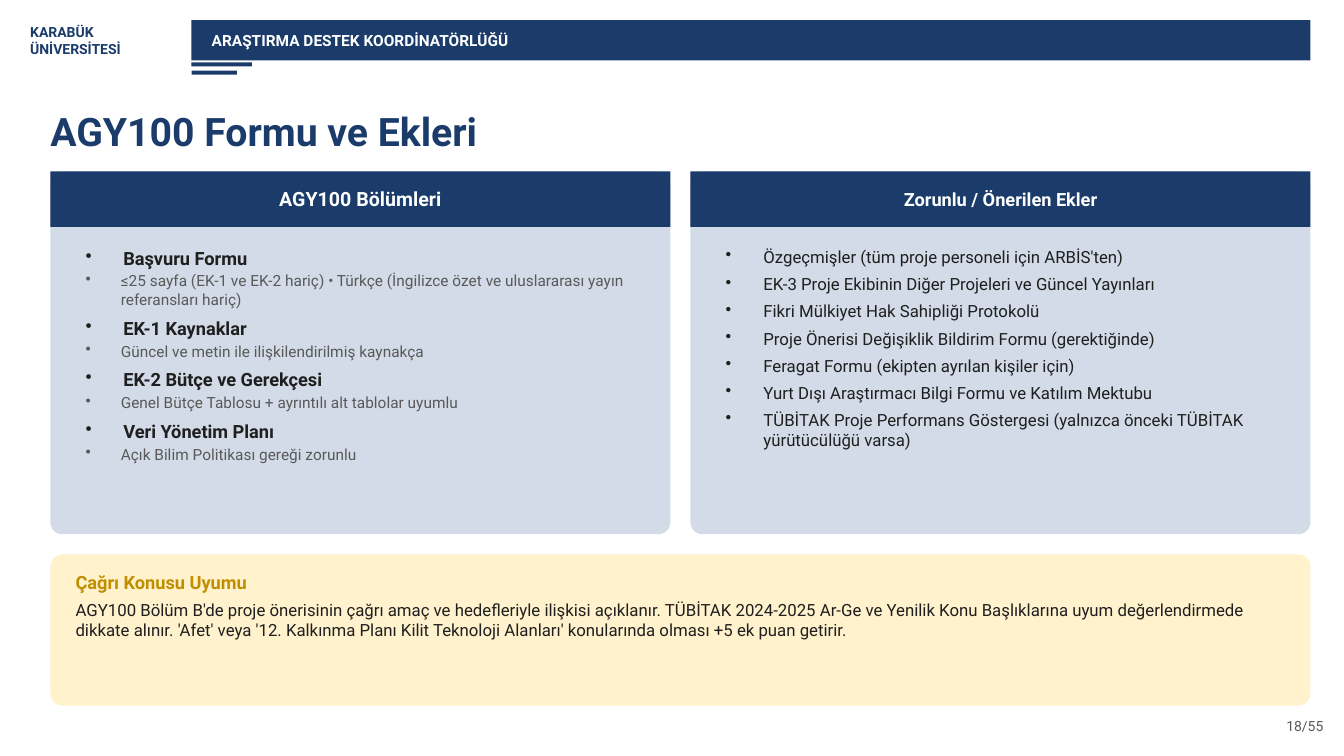
import pptx
import pptx.util
import pptx.dml.color
import pptx.enum.shapes
import pptx.enum.text
from lxml import etree

Pt = pptx.util.Pt
Shapes = pptx.enum.shapes.MSO_SHAPE
Align = pptx.enum.text.PP_ALIGN
Anchor = pptx.enum.text.MSO_ANCHOR

THEME = {
    "font": "Roboto",
    "navy": "1B3C6B", "white": "FFFFFF", "panel": "D2DBE7", "cream": "FFF2CC",
    "gold": "BF8F00", "ink": "1F1F1F", "gray": "595959",
    "title": 28, "panel_title": 14, "heading": 13, "body": 12, "banner": 11, "detail": 11, "small": 10,
}

UNIVERSITY = ["KARABÜK", "ÜNİVERSİTESİ"]
BANNER = "ARAŞTIRMA DESTEK KOORDİNATÖRLÜĞÜ"
TITLE = "AGY100 Formu ve Ekleri"
PAGE = "18/55"
SECTIONS = [
    ("Başvuru Formu",
     "≤25 sayfa (EK-1 ve EK-2 hariç) • Türkçe (İngilizce özet ve uluslararası yayın referansları hariç)"),
    ("EK-1 Kaynaklar", "Güncel ve metin ile ilişkilendirilmiş kaynakça"),
    ("EK-2 Bütçe ve Gerekçesi", "Genel Bütçe Tablosu + ayrıntılı alt tablolar uyumlu"),
    ("Veri Yönetim Planı", "Açık Bilim Politikası gereği zorunlu"),
]
ATTACHMENTS = [
    "Özgeçmişler (tüm proje personeli için ARBİS'ten)",
    "EK-3 Proje Ekibinin Diğer Projeleri ve Güncel Yayınları",
    "Fikri Mülkiyet Hak Sahipliği Protokolü",
    "Proje Önerisi Değişiklik Bildirim Formu (gerektiğinde)",
    "Feragat Formu (ekipten ayrılan kişiler için)",
    "Yurt Dışı Araştırmacı Bilgi Formu ve Katılım Mektubu",
    "TÜBİTAK Proje Performans Göstergesi (yalnızca önceki TÜBİTAK yürütücülüğü varsa)",
]
CALL_TITLE = "Çağrı Konusu Uyumu"
CALL_TEXT = (
    "AGY100 Bölüm B'de proje önerisinin çağrı amaç ve hedefleriyle ilişkisi açıklanır. "
    "TÜBİTAK 2024-2025 Ar-Ge ve Yenilik Konu Başlıklarına uyum değerlendirmede dikkate alınır. "
    "'Afet' veya '12. Kalkınma Planı Kilit Teknoloji Alanları' konularında olması +5 ek puan getirir."
)

MARGIN = 36
PANEL_TOP, PANEL_WIDTH, PANEL_HEIGHT, PANEL_GAP = 122.4, 442.8, 259.2, 14.4
PANEL_HEADER = 39.6
PADDING = 18
CONTENT_WIDTH = 2 * PANEL_WIDTH + PANEL_GAP
BANNER_LEFT = 136.8
CALL_TOP = PANEL_TOP + PANEL_HEIGHT + PANEL_GAP


def color(name):
    return pptx.dml.color.RGBColor.from_string(THEME[name])


def style(paragraph, size, tone, bold=False, align=Align.LEFT):
    paragraph.alignment = align
    for run in paragraph.runs:
        run.font.name = THEME["font"]
        run.font.size = Pt(THEME[size])
        run.font.bold = bold
        run.font.color.rgb = color(tone)


def prepare_frame(shape, anchor=Anchor.MIDDLE, inset=0):
    frame = shape.text_frame
    frame.word_wrap = True
    frame.auto_size = pptx.enum.text.MSO_AUTO_SIZE.NONE
    frame.vertical_anchor = anchor
    frame.margin_left = frame.margin_right = Pt(inset)
    frame.margin_top = frame.margin_bottom = Pt(inset / 2)
    return frame


def write(shape, text, size, tone, bold=False, align=Align.LEFT, anchor=Anchor.MIDDLE):
    frame = prepare_frame(shape, anchor)
    frame.text = text
    for paragraph in frame.paragraphs:
        style(paragraph, size, tone, bold, align)
    return frame


def add_box(slide, left, top, width, height, fill, radius=None):
    kind = Shapes.RECTANGLE if radius is None else Shapes.ROUNDED_RECTANGLE
    shape = slide.shapes.add_shape(kind, Pt(left), Pt(top), Pt(width), Pt(height))
    if radius is not None:
        shape.adjustments[0] = radius
    shape.shadow.inherit = False
    shape.fill.solid()
    shape.fill.fore_color.rgb = color(fill)
    shape.line.fill.background()
    return shape


def add_text_box(slide, left, top, width, height):
    return slide.shapes.add_textbox(Pt(left), Pt(top), Pt(width), Pt(height))


def add_bullet(paragraph, indent):
    properties = paragraph._p.get_or_add_pPr()
    properties.set("marL", str(Pt(indent)))
    properties.set("indent", str(-Pt(indent)))
    bullet = etree.SubElement(properties, pptx.oxml.ns.qn("a:buChar"))
    bullet.set("char", "•")


def add_panel(slide, column, title, title_size, items):
    left = MARGIN + column * (PANEL_WIDTH + PANEL_GAP)
    add_box(slide, left, PANEL_TOP, PANEL_WIDTH, PANEL_HEIGHT, "panel", 0.033)
    header = add_box(slide, left, PANEL_TOP, PANEL_WIDTH, PANEL_HEADER, "navy")
    write(header, title, title_size, "white", True, Align.CENTER)
    box = add_text_box(slide, left + PADDING, 172.8, PANEL_WIDTH - 2 * PADDING, 205.2)
    frame = prepare_frame(box, Anchor.TOP, 7.2)
    frame.text = "\n".join(item[0] for item in items)
    for paragraph, (text, size, tone, bold, indent, after) in zip(frame.paragraphs, items):
        add_bullet(paragraph, indent)
        paragraph.space_after = Pt(after)
        style(paragraph, size, tone, bold)


def main():
    presentation = pptx.Presentation()
    presentation.slide_width, presentation.slide_height = Pt(960), Pt(540)
    slide = presentation.slides.add_slide(presentation.slide_layouts[5])

    title = slide.shapes.title
    title.left, title.top, title.width, title.height = Pt(MARGIN), Pt(68.4), Pt(885.6), Pt(50.4)
    write(title, TITLE, "title", "navy", True)

    university = add_text_box(slide, 21.6, 10.8, 108, 36)
    write(university, "\n".join(UNIVERSITY), "small", "navy", True)
    banner = add_box(slide, BANNER_LEFT, 14.4, MARGIN + CONTENT_WIDTH - BANNER_LEFT, 28.8, "navy")
    write(banner, BANNER, "banner", "white", True).margin_left = Pt(14.4)
    for top, width in [(44.64, 43.2), (50.4, 32.4)]:
        add_box(slide, BANNER_LEFT, top, width, 2.88, "navy")
    write(add_text_box(slide, 873.36, 507.6, 72, 21.6), PAGE, "small", "gray", align=Align.RIGHT)

    sections = []
    for heading, detail in SECTIONS:
        sections.append((heading, "heading", "ink", True, 27, 2))
        sections.append((detail, "detail", "gray", False, 25.2, 6))
    attachments = [(text, "body", "ink", False, 27, 5) for text in ATTACHMENTS]
    add_panel(slide, 0, "AGY100 Bölümleri", "panel_title", sections)
    add_panel(slide, 1, "Zorunlu / Önerilen Ekler", "heading", attachments)

    add_box(slide, MARGIN, CALL_TOP, CONTENT_WIDTH, 108, "cream", 0.08)
    call_left, call_width = MARGIN + PADDING, CONTENT_WIDTH - 2 * PADDING
    call_title = add_text_box(slide, call_left, 403.2, call_width, 25.2)
    write(call_title, CALL_TITLE, "heading", "gold", True)
    call_text = add_text_box(slide, call_left, 428.4, call_width, 72)
    write(call_text, CALL_TEXT, "body", "ink", anchor=Anchor.TOP)

    presentation.save("out.pptx")


if __name__ == "__main__":
    main()
